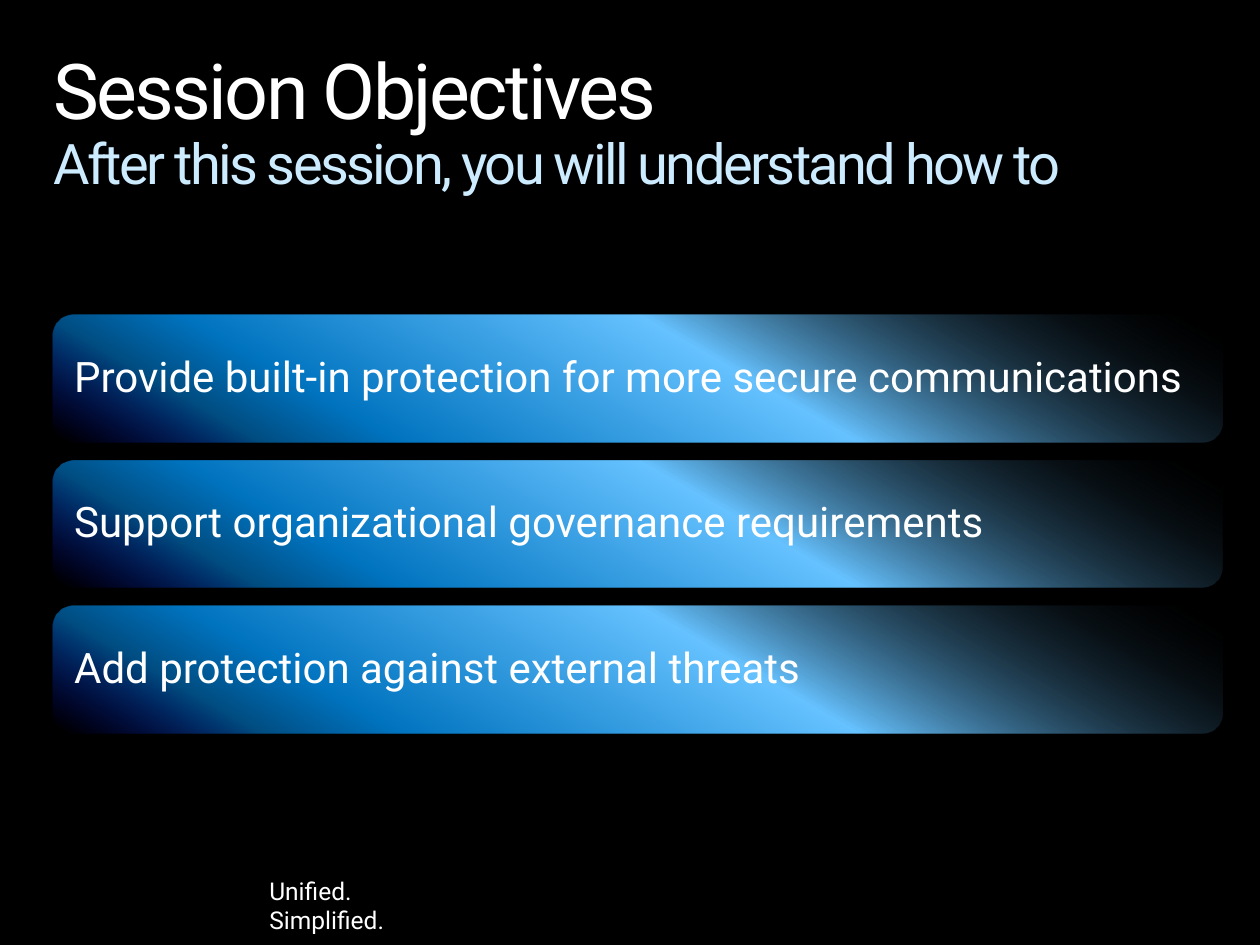
from lxml import etree
from pptx import Presentation
from pptx.dml.color import RGBColor
from pptx.enum.shapes import MSO_SHAPE
from pptx.enum.text import MSO_ANCHOR, MSO_AUTO_SIZE, PP_ALIGN
from pptx.oxml import parse_xml
from pptx.oxml.ns import nsdecls, qn
from pptx.util import Cm, Pt

LEFT = PP_ALIGN.LEFT
TOP, MIDDLE = MSO_ANCHOR.TOP, MSO_ANCHOR.MIDDLE
NO_FIT = MSO_AUTO_SIZE.NONE
ROUND = MSO_SHAPE.ROUNDED_RECTANGLE

GOALS = [
    "Provide built-in protection for more secure communications",
    "Support organizational governance requirements",
    "Add protection against external threats",
]
# Position in percent, colour, opacity in percent
STOPS = [(0, "000000", 0), (42, "66C2FF", 100), (75, "0073BF", 100),
         (85, "004C80", 100), (99, "050595", 0)]


def style(run, size, color):
    font = run.font
    for key, value in {"name": "Roboto", "size": Pt(size)}.items():
        setattr(font, key, value)
    font.color.rgb = RGBColor.from_string(color)


def shade(shape):
    """Fill the shape with the blue gradient that fades at both ends."""
    shape.fill.gradient()
    shape.fill.gradient_angle = 0
    grad = shape._element.spPr.find(qn("a:gradFill"))
    stops = grad.find(qn("a:gsLst"))
    for old in list(stops):
        stops.remove(old)
    for place, color, alpha in STOPS:
        stops.append(parse_xml(
            f'<a:gs {nsdecls("a")} pos="{place * 1000}"><a:srgbClr val="{color}">'
            f'<a:alpha val="{alpha * 1000}"/></a:srgbClr></a:gs>'))
    line = grad.find(qn("a:lin"))
    if line is None:
        line = etree.SubElement(grad, qn("a:lin"))
    line.set("ang", str(120 * 60000))
    line.set("scaled", "0")


deck = Presentation()
deck.slide_width, deck.slide_height = Cm(25.4), Cm(19.05)
slide = deck.slides.add_slide(deck.slide_layouts[5])
back = slide.background.fill
back.solid()
back.fore_color.rgb = RGBColor.from_string("000000")

# Title and subtitle share one placeholder
title = slide.shapes.title
title.left, title.top, title.width, title.height = Cm(1.07), Cm(1.07), Cm(23.29), Cm(2.92)
frame = title.text_frame
for key, value in {"margin_left": 0, "margin_top": 0, "margin_right": 0,
                   "margin_bottom": 0, "vertical_anchor": TOP,
                   "auto_size": NO_FIT, "word_wrap": True}.items():
    setattr(frame, key, value)
para = frame.paragraphs[0]
para.alignment, para.line_spacing = LEFT, 0.9
head = para.add_run()
head.text = "Session Objectives"
para.add_line_break()
sub = para.add_run()
sub.text = "After this session, you will understand how to"
for run, size, color in [(head, 44, "FFFFFF"), (sub, 32, "CCEBFF")]:
    style(run, size, color)
    run.font._element.set("spc", "-150")

# Objective bars
for row, goal in enumerate(GOALS):
    bar = slide.shapes.add_shape(ROUND, Cm(1.07), Cm(6.35 + row * 2.93), Cm(23.57), Cm(2.57))
    bar.shadow.inherit = False
    bar.line.fill.background()
    shade(bar)
    frame = bar.text_frame
    for key, value in {"margin_left": Cm(0.3), "margin_top": Cm(0.15),
                       "margin_right": Cm(0.3), "margin_bottom": Cm(0.15),
                       "vertical_anchor": MIDDLE, "word_wrap": True}.items():
        setattr(frame, key, value)
    para = frame.paragraphs[0]
    para.alignment, para.line_spacing = LEFT, 0.9
    run = para.add_run()
    run.text = goal
    style(run, 24, "FFFFFF")

# Tagline
tag = slide.shapes.add_textbox(Cm(5.18), Cm(17.53), Cm(4.6), Cm(1.45))
tag.text_frame.word_wrap = True
para = tag.text_frame.paragraphs[0]
para.text = "Unified.\vSimplified."
for run in para.runs:
    style(run, 14, "FFFFFF")

deck.save("out.pptx")
